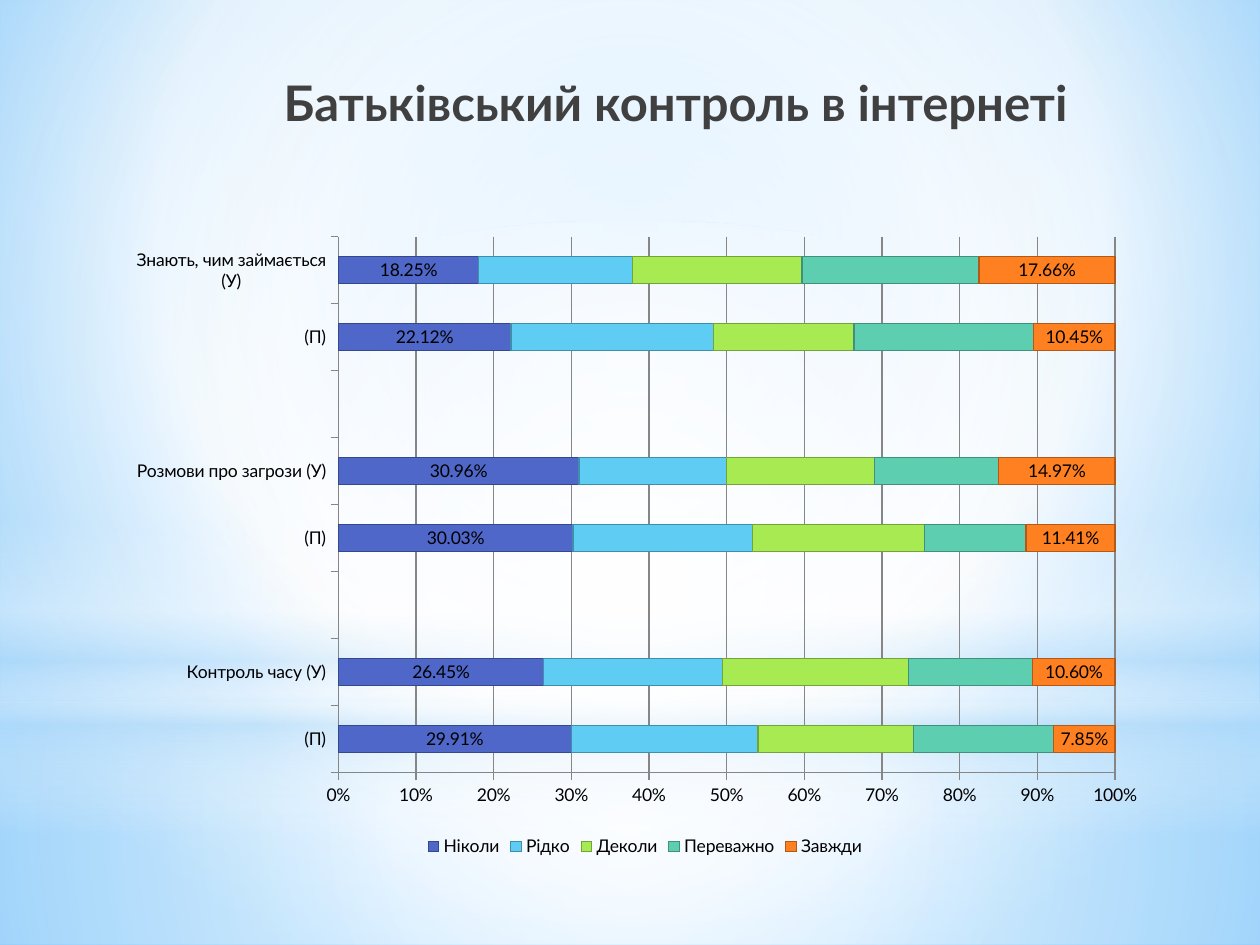
"""Build a slide with a stacked bar chart on parental control of internet use."""
from lxml import etree
from pptx import Presentation
from pptx import util as u
from pptx.chart import data as chart_data
from pptx.dml.color import RGBColor
from pptx.enum import chart as charts, shapes, text
from pptx.oxml import ns, parse_xml

PX = 914400 / 126
FONT = "Lato"
BLACK = RGBColor(0, 0, 0)
DARK = RGBColor(0x40, 0x40, 0x40)
GREY = RGBColor(0x86, 0x86, 0x86)
WHITE = RGBColor(0xFF, 0xFF, 0xFF)
PALE = RGBColor(0xB4, 0xDC, 0xFA)
SKY = RGBColor(0x9E, 0xD5, 0xFF)
AZURE = RGBColor(0x5B, 0xB9, 0xFF)
BLUE = RGBColor(0x4E, 0x67, 0xC8)
CYAN = RGBColor(0x5E, 0xCC, 0xF3)
LIME = RGBColor(0xA7, 0xEA, 0x52)
TEAL = RGBColor(0x5D, 0xCE, 0xAF)
ORANGE = RGBColor(0xFF, 0x80, 0x21)


def px(*lengths):
    return [u.Emu(round(length * PX)) for length in lengths]


def paint_gradient(element, stops, focus):
    stop_xml = "".join(
        f'<a:gs pos="{pos * 1000}"><a:srgbClr val="{color}">'
        f'<a:alpha val="{alpha * 1000}"/></a:srgbClr></a:gs>'
        for pos, color, alpha in stops)
    if focus:
        sides = " ".join(f'{side}="{value * 1000}"' for side, value in zip("ltrb", focus))
        direction = f'<a:path path="circle"><a:fillToRect {sides}/></a:path>'
    else:
        direction = '<a:lin ang="5400000" scaled="0"/>'
    gradient = parse_xml(
        f'<a:gradFill {ns.nsdecls("a")} rotWithShape="1">'
        f'<a:gsLst>{stop_xml}</a:gsLst>{direction}</a:gradFill>')
    solid = element.find(".//" + ns.qn("a:solidFill"))
    solid.getparent().replace(solid, gradient)


deck = Presentation()
deck.slide_width, deck.slide_height = px(1260, 945)
page = deck.slides.add_slide(deck.slide_layouts[5])

page.background.fill.solid()
paint_gradient(page.element, [(0, SKY, 100), (60, WHITE, 100), (100, AZURE, 100)],
               (20, 10, 20, 60))

RECT, OVAL = shapes.MSO_SHAPE.RECTANGLE, shapes.MSO_SHAPE.OVAL
CENTRE = (50, 50, 50, 50)
glows = [
    (RECT, (0, 703, 1260, 242), CENTRE,
     [(0, WHITE, 91), (37, WHITE, 76), (100, PALE, 79)]),
    (RECT, (0, 0, 1260, 703), CENTRE,
     [(0, WHITE, 89), (48, WHITE, 62), (100, PALE, 79)]),
    (RECT, (0, 519, 1260, 315), None,
     [(0, WHITE, 0), (29, WHITE, 30), (45, PALE, 40),
      (55, WHITE, 26), (65, PALE, 60), (100, WHITE, 0)]),
    (OVAL, (0, 221, 1260, 703), CENTRE, [(0, WHITE, 100), (56, WHITE, 0)]),
]
for kind, place, focus, stops in glows:
    glow = page.shapes.add_shape(kind, *px(*place))
    glow.shadow.inherit = False
    glow.line.fill.background()
    glow.fill.solid()
    paint_gradient(glow.element, stops, focus)

title = page.shapes.title
title.element.getparent().append(title.element)
title.left, title.top, title.width, title.height = px(203, 66, 877, 110)
title.text_frame.text = "Батьківський контроль в інтернеті"
title.text_frame.vertical_anchor = text.MSO_ANCHOR.TOP
title.text_frame.auto_size = text.MSO_AUTO_SIZE.NONE
para = title.text_frame.paragraphs[0]
para.alignment = text.PP_ALIGN.RIGHT
span = para.runs[0]
span.font.name, span.font.size, span.font.bold = FONT, u.Pt(28), True
span.font.color.rgb = DARK

answers = [
    ("Ніколи", BLUE, True, (0.2991, 0.2645, None, 0.3003, 0.3096, None, 0.2212, 0.1825)),
    ("Рідко", CYAN, False, (0.24, 0.23, None, 0.23, 0.19, None, 0.26, 0.2)),
    ("Деколи", LIME, False, (0.2, 0.24, None, 0.22, 0.19, None, 0.18, 0.22)),
    ("Переважно", TEAL, False, (0.18, 0.16, None, 0.13, 0.16, None, 0.23, 0.23)),
    ("Завжди", ORANGE, True, (0.0785, 0.106, None, 0.1141, 0.1497, None, 0.1045, 0.1766)),
]
table = chart_data.CategoryChartData(number_format="0.00%")
table.categories = ["(П)", "Контроль часу (У)", "", "(П)", "Розмови про загрози (У)", "",
                    "(П)", "Знають, чим займається (У)"]
for name, color, labelled, values in answers:
    table.add_series(name, values)

chart = page.shapes.add_chart(charts.XL_CHART_TYPE.BAR_STACKED_100,
                              *px(134, 224, 1022, 638), table).chart
chart.font.name, chart.font.size = FONT, u.Pt(10)
chart.font.color.rgb = BLACK
chart.has_title = False
chart.has_legend = True
chart.legend.position = charts.XL_LEGEND_POSITION.BOTTOM
chart.legend.include_in_layout = False

plot = chart.plots[0]
plot.gap_width, plot.overlap = 150, 100
plot.vary_by_categories = False
for series, (name, color, labelled, values) in zip(plot.series, answers):
    series.format.fill.solid()
    series.format.fill.fore_color.rgb = color
    series.format.line.color.rgb = RGBColor(*(channel * 7 // 10 for channel in color))
    series.format.line.width = u.Pt(0.75)
    if labelled:
        labels = series.data_labels
        labels.show_value = True
        labels.number_format, labels.number_format_is_linked = "0.00%", False

for axis in (chart.category_axis, chart.value_axis):
    axis.major_tick_mark = charts.XL_TICK_MARK.OUTSIDE
    axis.minor_tick_mark = charts.XL_TICK_MARK.NONE
    axis.format.line.color.rgb = GREY
chart.category_axis.has_major_gridlines = False
chart.value_axis.has_major_gridlines = True
chart.value_axis.major_gridlines.format.line.color.rgb = GREY
chart.value_axis.minimum_scale, chart.value_axis.maximum_scale = 0, 1
chart.value_axis.major_unit = 0.1
chart.value_axis.tick_labels.number_format = "0%"
chart.value_axis.tick_labels.number_format_is_linked = False

area = chart.element.find(".//" + ns.qn("c:plotArea"))
for old in area.findall(ns.qn("c:layout")):
    area.remove(old)
layout = etree.Element(ns.qn("c:layout"))
manual = etree.SubElement(layout, ns.qn("c:manualLayout"))
for tag, value in [("layoutTarget", "inner"), ("xMode", "edge"), ("yMode", "edge"),
                   ("x", 0.2), ("y", 0.02), ("w", 0.76), ("h", 0.84)]:
    etree.SubElement(manual, ns.qn(f"c:{tag}")).set("val", str(value))
area.insert(0, layout)

deck.save("out.pptx")
